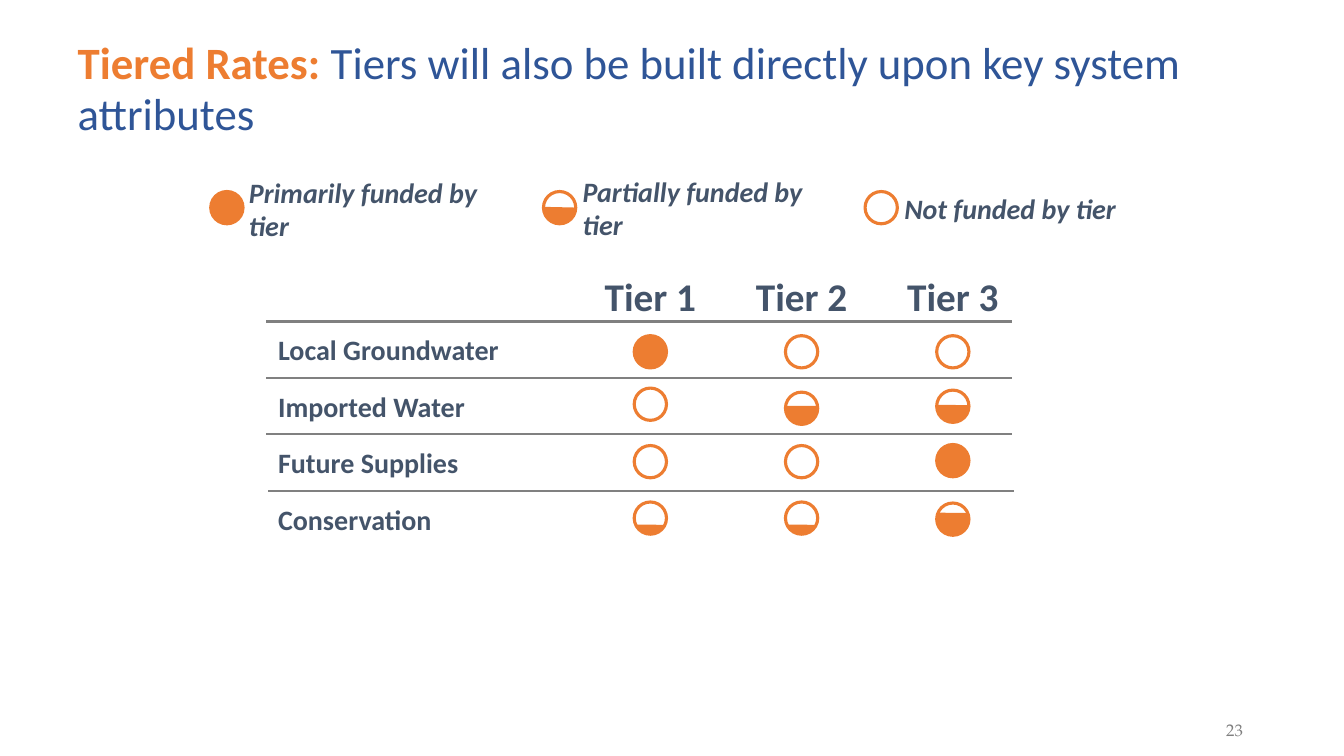
from lxml import etree
from pptx import Presentation
from pptx.dml.color import RGBColor
from pptx.enum.shapes import MSO_CONNECTOR, MSO_SHAPE
from pptx.enum.text import MSO_ANCHOR, MSO_AUTO_SIZE, PP_ALIGN
from pptx.oxml.ns import qn
from pptx.util import Inches, Pt

STRAIGHT = MSO_CONNECTOR.STRAIGHT
OVAL, CHORD = MSO_SHAPE.OVAL, MSO_SHAPE.CHORD
TOP, MIDDLE, BOTTOM = MSO_ANCHOR.TOP, MSO_ANCHOR.MIDDLE, MSO_ANCHOR.BOTTOM
LEFT, CENTER = PP_ALIGN.LEFT, PP_ALIGN.CENTER
NO_RESIZE = MSO_AUTO_SIZE.NONE

ORANGE = RGBColor(0xED, 0x7D, 0x31)
BLUE = RGBColor(0x2F, 0x55, 0x97)
SLATE = RGBColor(0x44, 0x54, 0x6A)
GRAY = RGBColor(0x80, 0x80, 0x80)
BODY_FONT = "Calibri"
NUMBER_FONT = "TeX Gyre Pagella"

TITLE = [("Tiered Rates: ", ORANGE, True),
         ("Tiers will also be built directly upon key system attributes", BLUE, False)]
PAGE_NUMBER = "23"

FULL, EMPTY = "full", "empty"
LOW = (24.69, 156.38)
HALF = (359.65, 182.91)
HALF_TIER_2 = (351.31, 188.21)
HALF_TIER_3 = (355.91, 184.71)
HIGH = (337.43, 203.52)

LEGEND = [("Primarily funded by tier", FULL, 2.09, 2.37, 1.85, 2.77),
          ("Partially funded by tier", HALF, 5.39, 5.68, 1.84, 2.72),
          ("Not funded by tier", EMPTY, 8.58, 8.87, 1.85, 2.72)]
LEGEND_MARK_TOP = 1.9

TIERS = ["Tier 1", "Tier 2", "Tier 3"]
ROWS = [("Local Groundwater", 2.64, [(FULL, 3.33), (EMPTY, 3.33), (EMPTY, 3.33)]),
        ("Imported Water", 2.64, [(EMPTY, 3.85), (HALF_TIER_2, 3.89), (HALF_TIER_3, 3.87)]),
        ("Future Supplies", 2.64, [(EMPTY, 4.42), (EMPTY, 4.42), (FULL, 4.41)]),
        ("Conservation", 2.66, [(LOW, 4.98), (LOW, 4.98), (HIGH, 4.99)])]

MARK_SIZE = 0.32
FIRST_TIER, TIER_STEP, TIER_WIDTH = 5.69, 1.5, 1.52
FIRST_RULE, ROW_STEP, RULE_LENGTH = 3.19, 0.56, 7.4
LABEL_LEFT, LABEL_WIDTH, LABEL_HEIGHT = 2.66, 3.13, 0.44


def add_span(para, text, size, color, bold=False, italic=False, font=BODY_FONT):
    """Add one formatted run to a paragraph."""
    span = para.add_run()
    span.text = text
    span.font.name = font
    span.font.size = Pt(size)
    span.font.bold = bold
    span.font.italic = italic
    span.font.color.rgb = color


def add_label(page, text, left, top, width, height, size, align=LEFT, italic=False):
    """Add a bold, vertically centred label."""
    box = page.shapes.add_textbox(Inches(left), Inches(top), Inches(width), Inches(height))
    box.text_frame.word_wrap = True
    box.text_frame.vertical_anchor = MIDDLE
    para = box.text_frame.paragraphs[0]
    para.alignment = align
    add_span(para, text, size, SLATE, True, italic)


def add_disc(shapes, kind, left, top, filled):
    """Add a circle or chord of the mark size."""
    disc = shapes.add_shape(kind, Inches(left), Inches(top), Inches(MARK_SIZE), Inches(MARK_SIZE))
    disc.shadow.inherit = False
    if filled:
        disc.fill.solid()
        disc.fill.fore_color.rgb = ORANGE
    else:
        disc.fill.background()
    if kind == CHORD:
        disc.line.fill.background()
    else:
        disc.line.color.rgb = ORANGE
        disc.line.width = Pt(2.25)
    return disc


def add_mark(page, level, left, top):
    """Add a full, empty or partly filled funding mark."""
    if level in (FULL, EMPTY):
        add_disc(page.shapes, OVAL, left, top, level == FULL)
        return
    group = page.shapes.add_group_shape()
    chord = add_disc(group.shapes, CHORD, left, top, True)
    for index, degrees in enumerate(level):
        chord.adjustments[index] = degrees * 0.6
    add_disc(group.shapes, OVAL, left, top, False)


def add_rule(page, left, top):
    """Add a gray horizontal rule."""
    rule = page.shapes.add_connector(STRAIGHT, Inches(left), Inches(top),
                                     Inches(left + RULE_LENGTH), Inches(top))
    rule.line.color.rgb = GRAY
    rule.line.width = Pt(1.5)
    etree.SubElement(rule.element.spPr, qn("a:effectLst"))


def add_title(page):
    """Place and fill the title placeholder."""
    title = page.shapes.title
    title.left, title.top = Inches(0.67), Inches(0.33)
    title.width, title.height = Inches(12), Inches(0.83)
    frame = title.text_frame
    frame.word_wrap = True
    frame.auto_size = NO_RESIZE
    frame.vertical_anchor = TOP
    para = frame.paragraphs[0]
    para.alignment = LEFT
    para.line_spacing = 0.95
    para.space_before = Pt(0)
    for text, color, bold in TITLE:
        add_span(para, text, 32, color, bold)


def add_page_number(page):
    """Add the page number at the lower right."""
    box = page.shapes.add_textbox(Inches(11.79), Inches(7.09), Inches(0.91), Inches(0.3))
    frame = box.text_frame
    frame.word_wrap = True
    frame.vertical_anchor = BOTTOM
    frame.margin_left = frame.margin_right = Inches(0.05)
    frame.margin_top = frame.margin_bottom = Inches(0.05)
    para = frame.paragraphs[0]
    para.alignment = CENTER
    add_span(para, PAGE_NUMBER, 12, GRAY, font=NUMBER_FONT)


def main():
    """Build the tiered rates slide."""
    deck = Presentation()
    deck.slide_width, deck.slide_height = Inches(13.33), Inches(7.5)
    page = deck.slides.add_slide(deck.slide_layouts[5])
    add_title(page)
    add_page_number(page)

    for text, level, mark_left, text_left, text_top, width in LEGEND:
        add_mark(page, level, mark_left, LEGEND_MARK_TOP)
        add_label(page, text, text_left, text_top, width, LABEL_HEIGHT, 20, italic=True)

    tier_lefts = [FIRST_TIER + TIER_STEP * index for index in range(len(TIERS))]
    for tier, left in zip(TIERS, tier_lefts):
        add_label(page, tier, left, 2.65, TIER_WIDTH, 0.57, 28, CENTER)

    for index, (name, rule_left, marks) in enumerate(ROWS):
        rule_top = FIRST_RULE + ROW_STEP * index
        add_rule(page, rule_left, rule_top)
        add_label(page, name, LABEL_LEFT, rule_top + 0.06, LABEL_WIDTH, LABEL_HEIGHT, 20)
        for left, (level, top) in zip(tier_lefts, marks):
            add_mark(page, level, left + (TIER_WIDTH - MARK_SIZE) / 2, top)

    deck.save("out.pptx")


if __name__ == "__main__":
    main()
